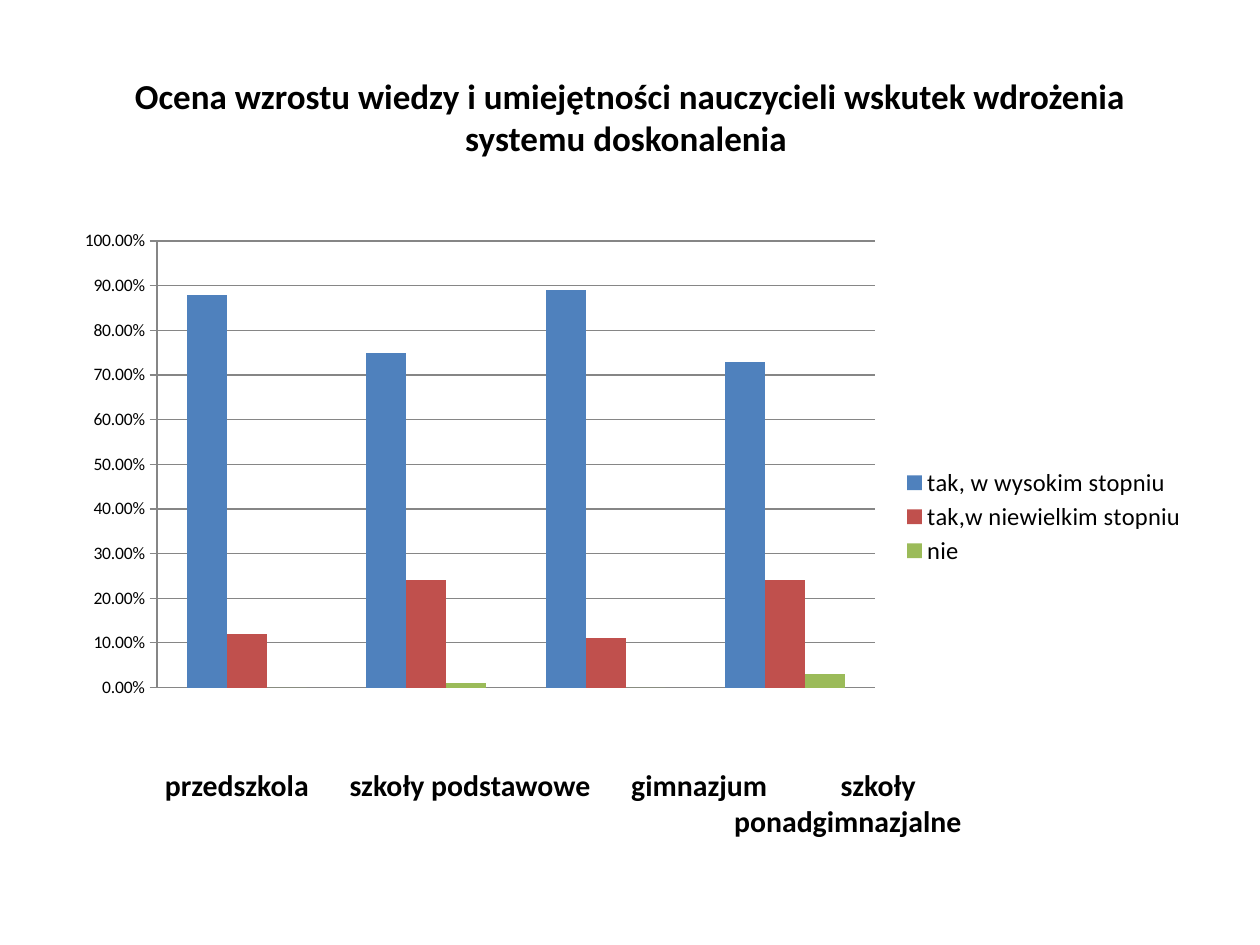
from lxml import etree
from pptx import Presentation
from pptx.chart.data import CategoryChartData
from pptx.dml.color import RGBColor
from pptx.enum.chart import XL_CHART_TYPE, XL_LEGEND_POSITION, XL_TICK_MARK
from pptx.enum.text import MSO_ANCHOR, PP_ALIGN
from pptx.oxml.ns import qn
from pptx.util import Inches, Pt

COLUMNS = XL_CHART_TYPE.COLUMN_CLUSTERED
LEGEND_RIGHT = XL_LEGEND_POSITION.RIGHT
TICK_CROSS = XL_TICK_MARK.CROSS
TICK_NONE = XL_TICK_MARK.NONE
CENTER = PP_ALIGN.CENTER
MIDDLE = MSO_ANCHOR.MIDDLE

FONT = "Calibri"
BLACK = "000000"
GRID_GREY = "868686"

TITLE = ("Ocena wzrostu wiedzy i umiejętności nauczycieli "
         "wskutek wdrożenia systemu doskonalenia ")
ANSWERS = [
    ("tak, w wysokim stopniu", (0.88, 0.75, 0.89, 0.73), "4F81BD"),
    ("tak,w niewielkim stopniu", (0.12, 0.24, 0.11, 0.24), "C0504D"),
    ("nie", (0, 0.01, 0, 0.03), "9BBB59"),
]
# School label: text, centre, line number
SCHOOLS = [
    ("przedszkola", 1.88, 0),
    ("szkoły podstawowe", 3.73, 0),
    ("gimnazjum", 5.55, 0),
    ("szkoły", 6.97, 0),
    ("ponadgimnazjalne", 6.73, 1),
]
LABEL_TOP, LABEL_WIDTH, LABEL_HEIGHT = 6.08, 2.4, 0.29


def color(hex_value):
    return RGBColor.from_string(hex_value)


def set_values(target, values):
    for name, value in values.items():
        setattr(target, name, value)


def set_font(font, size, bold=False):
    set_values(font, {"name": FONT, "size": Pt(size), "bold": bold})
    font.color.rgb = color(BLACK)


def set_line(line):
    line.color.rgb = color(GRID_GREY)
    line.width = Pt(0.75)


def set_box(shape, left, top, width, height):
    set_values(shape, {"left": Inches(left), "top": Inches(top),
                       "width": Inches(width), "height": Inches(height)})


def set_layout(part, index, box, inner=False):
    """Place a chart part by fractions of the chart area."""
    for old in part.findall(qn("c:layout")):
        part.remove(old)
    layout = etree.Element(qn("c:layout"))
    manual = etree.SubElement(layout, qn("c:manualLayout"))
    settings = [("layoutTarget", "inner")] if inner else []
    settings += [("xMode", "edge"), ("yMode", "edge")]
    settings += zip("xywh", box)
    for tag, value in settings:
        etree.SubElement(manual, qn(f"c:{tag}")).set("val", str(value))
    part.insert(index, layout)


def add_title(slide):
    title = slide.shapes.title
    set_box(title, 0.5, 0.3, 9, 1.25)
    frame = title.text_frame
    frame.text = TITLE
    set_values(frame, {"vertical_anchor": MIDDLE, "word_wrap": True})
    paragraph = frame.paragraphs[0]
    paragraph.alignment = CENTER
    set_font(paragraph.runs[0].font, 20, bold=True)


def add_answer_chart(slide):
    data = CategoryChartData(number_format="0.00%")
    data.categories = ["1", "2", "3", "4"]
    for answer, shares, _ in ANSWERS:
        data.add_series(answer, shares)
    chart = slide.shapes.add_chart(
        COLUMNS, Inches(0.5), Inches(1.75), Inches(9), Inches(4.95), data).chart
    set_font(chart.font, 10)
    set_values(chart, {"has_title": False, "has_legend": True})

    # Columns
    columns = chart.plots[0]
    set_values(columns, {"gap_width": 150, "overlap": 0,
                         "vary_by_categories": False})
    for series, (_, _, fill) in zip(columns.series, ANSWERS):
        series.format.fill.solid()
        series.format.fill.fore_color.rgb = color(fill)

    # Axes
    chart.category_axis.visible = False
    share_axis = chart.value_axis
    set_values(share_axis, {
        "minimum_scale": 0, "maximum_scale": 1, "major_unit": 0.1,
        "has_major_gridlines": True, "major_tick_mark": TICK_CROSS,
        "minor_tick_mark": TICK_NONE})
    set_values(share_axis.tick_labels, {"number_format": "0.00%",
                                        "number_format_is_linked": False})
    set_line(share_axis.format.line)
    set_line(share_axis.major_gridlines.format.line)

    # Legend and placement
    legend = chart.legend
    set_values(legend, {"position": LEGEND_RIGHT, "include_in_layout": False})
    set_font(legend.font, 14)
    root = chart.element
    set_layout(root.find(f".//{qn('c:plotArea')}"), 0,
               (0.083, 0.033, 0.633, 0.716), inner=True)
    set_layout(root.find(f".//{qn('c:legend')}"), 1, (0.74, 0.39, 0.25, 0.17))


def add_school_label(slide, text, center, line):
    label = slide.shapes.add_textbox(
        Inches(center - LABEL_WIDTH / 2), Inches(LABEL_TOP + line * LABEL_HEIGHT),
        Inches(LABEL_WIDTH), Inches(LABEL_HEIGHT))
    frame = label.text_frame
    frame.text = text
    set_values(frame, {"margin_left": 0, "margin_right": 0, "margin_top": 0,
                       "margin_bottom": 0, "word_wrap": True,
                       "vertical_anchor": MIDDLE})
    paragraph = frame.paragraphs[0]
    paragraph.alignment = CENTER
    set_font(paragraph.runs[0].font, 17, bold=True)


def main():
    presentation = Presentation()
    set_values(presentation, {"slide_width": Inches(10),
                              "slide_height": Inches(7.5)})
    slide = presentation.slides.add_slide(presentation.slide_layouts[5])
    add_title(slide)
    add_answer_chart(slide)
    for school in SCHOOLS:
        add_school_label(slide, *school)
    presentation.save("out.pptx")


if __name__ == "__main__":
    main()
